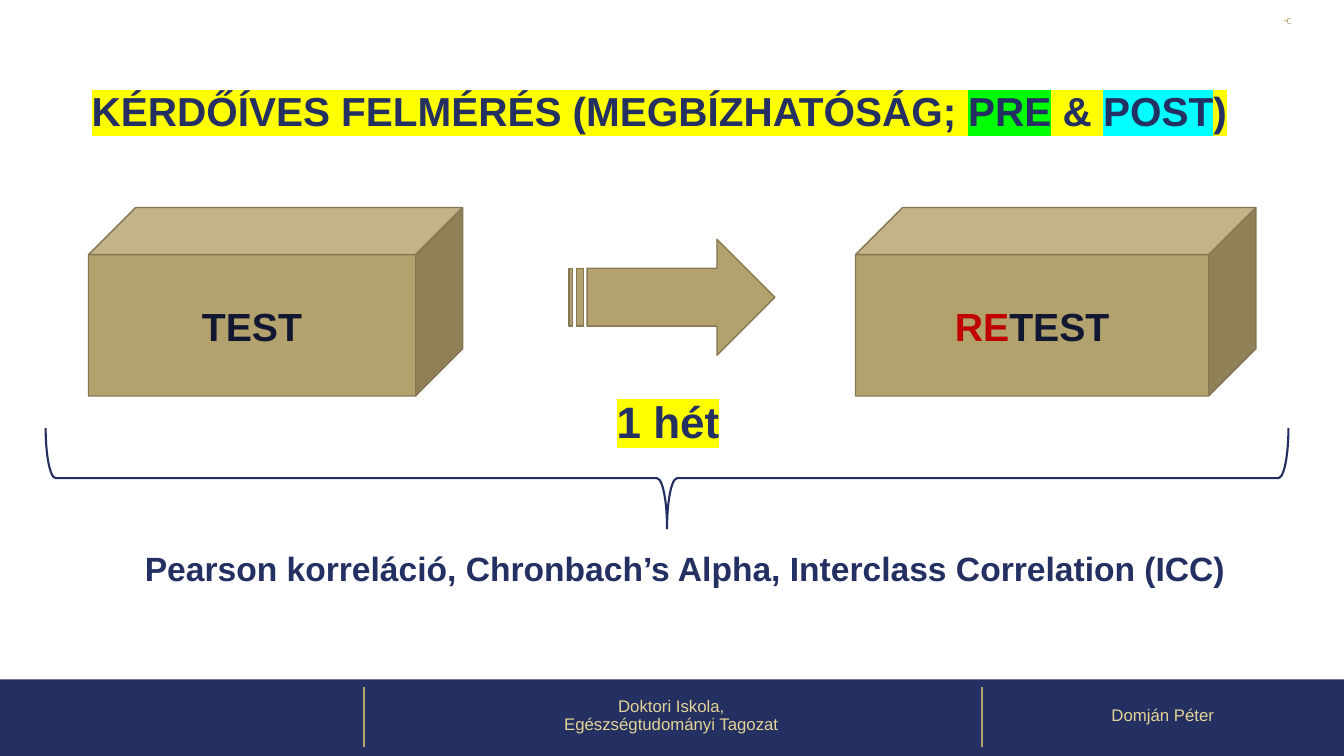
from lxml.etree import SubElement
from pptx import Presentation
from pptx.dml.color import RGBColor
from pptx.enum.shapes import MSO_CONNECTOR, MSO_SHAPE
from pptx.enum.text import MSO_ANCHOR, MSO_AUTO_SIZE, PP_ALIGN
from pptx.oxml.ns import qn
from pptx.util import Cm, Pt

NAVY = RGBColor(0x24, 0x2F, 0x62)
INK = RGBColor(0x12, 0x17, 0x31)
GOLD = RGBColor(0xB3, 0xA1, 0x6E)
BRONZE = RGBColor(0x84, 0x77, 0x51)
CREAM = RGBColor(0xE3, 0xD4, 0x96)
RED = RGBColor(0xC0, 0x00, 0x00)
YELLOW = RGBColor(0xFF, 0xFF, 0x00)
GREEN = RGBColor(0x00, 0xFF, 0x00)
CYAN = RGBColor(0x00, 0xFF, 0xFF)


def add_span(para, text, size=12, color=NAVY, bold=False, highlight=None):
    span = para.add_run()
    span.text = text
    span.font.name = "Arial"
    span.font.size = Pt(size)
    span.font.bold = bold
    span.font.color.rgb = color
    if highlight is not None:
        properties = span._r.get_or_add_rPr()
        marker = SubElement(properties, qn("a:highlight"))
        SubElement(marker, qn("a:srgbClr"), val=str(highlight))
        properties.find(qn("a:solidFill")).addnext(marker)


class SlideBuilder:
    """Draws styled elements on the current slide."""

    def __init__(self, slide):
        self.shapes = slide.shapes

    def fill_text(self, box, paragraphs, align=PP_ALIGN.CENTER, spacing=1.0,
                  anchor=MSO_ANCHOR.MIDDLE, wrap=True):
        frame = box.text_frame
        frame.word_wrap = wrap
        frame.vertical_anchor = anchor
        for index, spans in enumerate(paragraphs):
            para = frame.add_paragraph() if index else frame.paragraphs[0]
            para.alignment = align
            para.line_spacing = spacing
            for text, style in spans:
                add_span(para, text, **style)

    def text(self, left, top, width, height, paragraphs, **layout):
        box = self.shapes.add_textbox(Cm(left), Cm(top), Cm(width), Cm(height))
        self.fill_text(box, paragraphs, **layout)
        return box

    def shape(self, kind, left, top, width, height, fill=None, line=None, weight=1):
        shape = self.shapes.add_shape(kind, Cm(left), Cm(top), Cm(width), Cm(height))
        shape.shadow.inherit = False
        if fill is None:
            shape.fill.background()
        else:
            shape.fill.solid()
            shape.fill.fore_color.rgb = fill
        if line is None:
            shape.line.fill.background()
        else:
            shape.line.color.rgb = line
            shape.line.width = Pt(weight)
        return shape

    def cube(self, left, width, spans):
        cube = self.shape(MSO_SHAPE.CUBE, left, 5.23, width, 4.75, GOLD, BRONZE)
        self.fill_text(cube, [spans])

    def divider(self, left):
        line = self.shapes.add_connector(
            MSO_CONNECTOR.STRAIGHT, Cm(left), Cm(17.32), Cm(left), Cm(18.82))
        line.line.color.rgb = GOLD
        line.line.width = Pt(1.5)
        SubElement(line._element.spPr, qn("a:effectLst"))


def main():
    deck = Presentation()
    deck.slide_width, deck.slide_height = Cm(33.87), Cm(19.05)
    page = SlideBuilder(deck.slides.add_slide(deck.slide_layouts[6]))

    page.shape(MSO_SHAPE.RECTANGLE, 0, 17.12, 33.87, 1.93, fill=NAVY)
    for left in (9.17, 24.74):
        page.divider(left)
    footer = {"size": 12, "color": CREAM}
    page.text(9.12, 17.04, 15.6, 2.01, [
        [("Doktori Iskola,", footer)],
        [("Egészségtudományi Tagozat", footer)],
    ], spacing=0.9)
    page.text(24.74, 17.04, 9.13, 2.01, [[("Domján Péter", footer)]], spacing=0.9)

    label = {"size": 28, "color": INK, "bold": True}
    page.cube(2.23, 9.43, [("TEST", label)])
    page.cube(21.56, 10.09, [("RE", {**label, "color": RED}), ("TEST", label)])
    page.shape(MSO_SHAPE.STRIPED_RIGHT_ARROW, 14.34, 6.03, 5.19, 2.92, GOLD, BRONZE)

    title = {"size": 28.9, "bold": True, "highlight": YELLOW}
    page.text(2.01, 2.39, 29.21, 1.19, [[
        ("KÉRDŐÍVES FELMÉRÉS (MEGBÍZHATÓSÁG; ", title),
        ("PRE", {**title, "highlight": GREEN}),
        (" & ", title),
        ("POST", {**title, "highlight": CYAN}),
        (")", title),
    ]], spacing=0.7, anchor=MSO_ANCHOR.TOP, wrap=False)
    page.text(2.23, 10.19, 29.21, 1.19, [[("1 hét", {**title, "size": 31.4})]],
              spacing=0.7, anchor=MSO_ANCHOR.TOP)

    page.shape(MSO_SHAPE.LEFT_BRACE, 32.36, 0.46, 0.18, 0.13, line=GOLD, weight=0.5)
    brace = page.shape(MSO_SHAPE.RIGHT_BRACE, 15.54, -3.61, 2.54, 31.32,
                       line=NAVY, weight=1.5)
    brace.rotation = 90
    brace.adjustments[0] = 0.1
    methods = page.text(3.4, 13.67, 28.22, 1.28, [[
        ("Pearson korreláció, Chronbach’s Alpha, Interclass Correlation (ICC)",
         {"size": 24, "bold": True}),
    ]], align=PP_ALIGN.LEFT, anchor=MSO_ANCHOR.TOP, wrap=False)
    methods.text_frame.auto_size = MSO_AUTO_SIZE.SHAPE_TO_FIT_TEXT

    deck.save("out.pptx")


if __name__ == "__main__":
    main()
